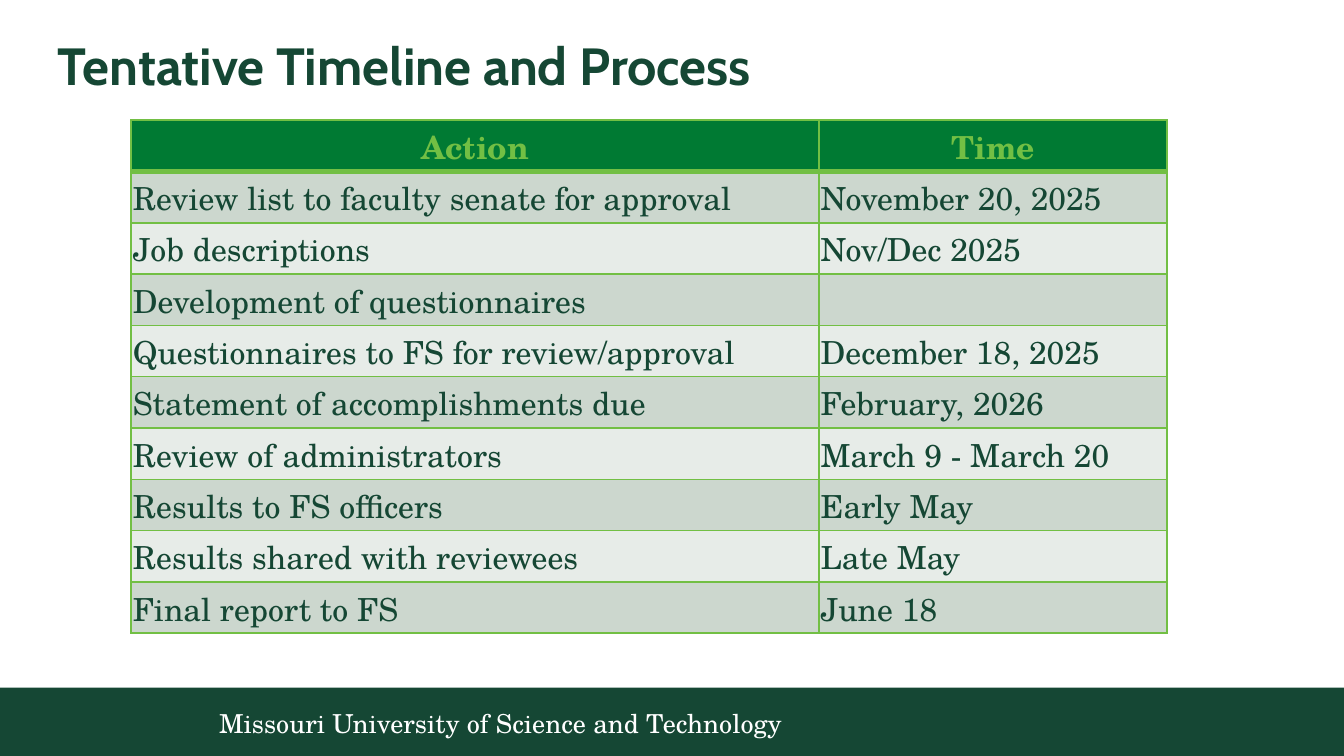
from lxml import etree
from pptx import Presentation
from pptx.dml.color import RGBColor
from pptx.enum.shapes import MSO_SHAPE
from pptx.enum.text import MSO_ANCHOR, PP_ALIGN
from pptx.oxml.ns import qn
from pptx.util import Cm, Pt

RECTANGLE = MSO_SHAPE.RECTANGLE
TOP, MIDDLE = MSO_ANCHOR.TOP, MSO_ANCHOR.MIDDLE
LEFT, CENTER = PP_ALIGN.LEFT, PP_ALIGN.CENTER

TITLE = "Tentative Timeline and Process"
FOOTER = "Missouri University of Science and Technology"
TIMELINE = [
    ("Action", "Time"),
    ("Review list to faculty senate for approval", "November 20, 2025"),
    ("Job descriptions", "Nov/Dec 2025"),
    ("Development of questionnaires", ""),
    ("Questionnaires to FS for review/approval", "December 18, 2025"),
    ("Statement of accomplishments due", "February, 2026"),
    ("Review of administrators", "March 9 - March 20"),
    ("Results to FS officers", "Early May"),
    ("Results shared with reviewees", "Late May"),
    ("Final report to FS", "June 18"),
]
COLUMN_WIDTHS = (13.0, 6.58)
ROW_HEIGHT = 0.97

DARK, GREEN, LIME, WHITE = "154734", "007A33", "72BF44", "FFFFFF"
BANDS = ("E7ECE8", "CCD7CE")
SERIF = "TeX Gyre Schola"
TITLE_FONT = {"name": "Cabin", "size": Pt(28), "bold": True}
FOOTER_FONT = {"name": SERIF, "size": Pt(14), "bold": False}
HEAD_FONT = {"name": SERIF, "size": Pt(17), "bold": True}
BODY_FONT = {"name": SERIF, "size": Pt(17), "bold": False}
CELL_FORMAT = {
    "margin_left": Cm(0.03),
    "margin_right": Cm(0.03),
    "margin_top": Cm(0.03),
    "margin_bottom": 0,
    "vertical_anchor": MIDDLE,
}


def color(value):
    return RGBColor.from_string(value)


def apply(target, values):
    for name, value in values.items():
        setattr(target, name, value)


def paint(target, value):
    target.fill.solid()
    target.fill.fore_color.rgb = color(value)


def write(frame, text, font, ink, **paragraph_format):
    para = frame.paragraphs[0]
    apply(para, paragraph_format)
    if text:
        span = para.add_run()
        span.text = text
        apply(span.font, font)
        span.font.color.rgb = color(ink)


def add_text(page, area, text, font, ink, frame_format, **paragraph_format):
    box = page.shapes.add_textbox(*map(Cm, area))
    box.text_frame.word_wrap = True
    apply(box.text_frame, frame_format)
    write(box.text_frame, text, font, ink, **paragraph_format)


def add_borders(cell, bottom_width, top_width):
    properties = cell._tc.get_or_add_tcPr()
    widths = {"lnL": 1, "lnR": 1, "lnT": top_width, "lnB": bottom_width}
    for side, width in widths.items():
        line = etree.SubElement(properties, qn(f"a:{side}"), w=str(Pt(width)))
        fill = etree.SubElement(line, qn("a:solidFill"))
        etree.SubElement(fill, qn("a:srgbClr"), val=LIME)


def add_timeline(page):
    frame = page.shapes.add_table(
        len(TIMELINE), len(COLUMN_WIDTHS), Cm(2.48), Cm(2.27),
        Cm(sum(COLUMN_WIDTHS)), Cm(ROW_HEIGHT * len(TIMELINE)))
    table = frame.table
    for column, width in zip(table.columns, COLUMN_WIDTHS):
        column.width = Cm(width)
    for index, (row, texts) in enumerate(zip(table.rows, TIMELINE)):
        row.height = Cm(ROW_HEIGHT)
        head = index == 0
        for cell, text in zip(row.cells, texts):
            apply(cell, CELL_FORMAT)
            add_borders(cell, 3 if head else 1, 3 if index == 1 else 1)
            paint(cell, GREEN if head else BANDS[index % 2])
            write(cell.text_frame, text, HEAD_FONT if head else BODY_FONT,
                  LIME if head else DARK, alignment=CENTER if head else LEFT)


def main():
    deck = Presentation()
    deck.slide_width, deck.slide_height = Cm(25.4), Cm(14.29)
    page = deck.slides.add_slide(deck.slide_layouts[6])

    band = page.shapes.add_shape(RECTANGLE, Cm(-0.1), Cm(13), Cm(25.5), Cm(1.29))
    band.shadow.inherit = False
    paint(band, DARK)
    band.line.fill.background()

    no_margins = dict.fromkeys(
        ("margin_left", "margin_right", "margin_top", "margin_bottom"), 0)
    add_text(page, (1.09, 0.76, 23.22, 1.12), TITLE, TITLE_FONT, DARK,
             {**no_margins, "vertical_anchor": TOP}, line_spacing=0.9)
    add_text(page, (3.89, 13.16, 16.13, 1.02), FOOTER, FOOTER_FONT, WHITE,
             {"vertical_anchor": MIDDLE}, space_after=Pt(6))
    add_timeline(page)
    deck.save("out.pptx")


if __name__ == "__main__":
    main()
